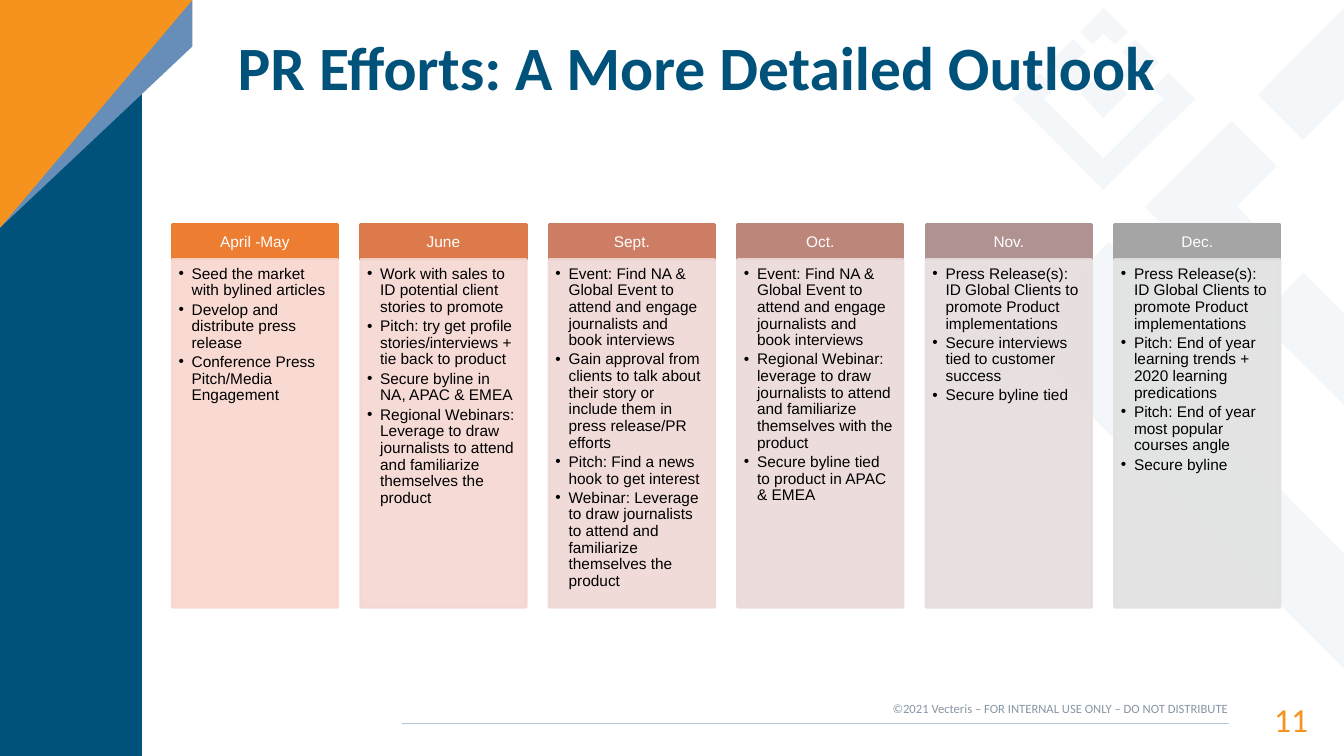
from dataclasses import dataclass

from lxml import etree
from pptx import Presentation
from pptx.dml.color import RGBColor
from pptx.enum.shapes import MSO_CONNECTOR, MSO_SHAPE
from pptx.enum.text import MSO_ANCHOR, MSO_AUTO_SIZE, PP_ALIGN
from pptx.oxml.ns import qn
from pptx.util import Cm, Pt

RECT = MSO_SHAPE.RECTANGLE
STRAIGHT = MSO_CONNECTOR.STRAIGHT
LEFT, CENTER, RIGHT = PP_ALIGN.LEFT, PP_ALIGN.CENTER, PP_ALIGN.RIGHT
TOP, MIDDLE = MSO_ANCHOR.TOP, MSO_ANCHOR.MIDDLE
NO_FIT = MSO_AUTO_SIZE.NONE

COLORS = {
    "navy": "00527B", "steel": "668EB8", "orange": "F6921E",
    "pattern": "E9EEF4", "rule": "B3C6DC", "footer": "8796A4",
    "white": "FFFFFF", "black": "000000",
    "apr_head": "ED7D31", "apr_body": "F8D7CE",
    "jun_head": "DC7A4B", "jun_body": "F4D7D1",
    "sep_head": "CC7D64", "sep_body": "EFD8D5",
    "oct_head": "BD867B", "oct_body": "EADAD9",
    "nov_head": "B09391", "nov_body": "E6DDDD",
    "dec_head": "A5A5A5", "dec_body": "E1E1E1",
}

# Column grid, in centimetres
COL_LEFT, COL_PITCH, COL_WIDTH = 4.34, 4.75, 4.17
HEAD_TOP, HEAD_HEIGHT = 5.66, 0.88
BODY_TOP, BODY_HEIGHT = 6.54, 8.76


@dataclass
class Period:
    key: str
    label: str
    efforts: list[str]


@dataclass
class Polygon:
    color: str
    points: list[tuple[float, float]]
    alpha: int = 100


PERIODS = [
    Period("apr", "April -May", [
        "Seed the market with bylined articles",
        "Develop and distribute press release",
        "Conference Press Pitch/Media Engagement"]),
    Period("jun", "June", [
        "Work with sales to ID potential client stories to promote",
        "Pitch: try get profile stories/interviews + tie back to product",
        "Secure byline in NA, APAC & EMEA",
        "Regional Webinars: Leverage to draw journalists to attend and "
        "familiarize themselves the product"]),
    Period("sep", "Sept.", [
        "Event: Find NA & Global Event to attend and engage journalists and book interviews",
        "Gain approval from clients to talk about their story or include them in "
        "press release/PR efforts",
        "Pitch: Find a news hook to get interest",
        "Webinar: Leverage to draw journalists to attend and familiarize themselves the product"]),
    Period("oct", "Oct.", [
        "Event: Find NA & Global Event to attend and engage journalists and book interviews",
        "Regional Webinar: leverage to draw journalists to attend and familiarize "
        "themselves with the product",
        "Secure byline tied to product in APAC & EMEA"]),
    Period("nov", "Nov.", [
        "Press Release(s): ID Global Clients to promote Product implementations",
        "Secure interviews tied to customer success",
        "Secure byline tied"]),
    Period("dec", "Dec.", [
        "Press Release(s): ID Global Clients to promote Product implementations",
        "Pitch: End of year learning trends + 2020 learning predications",
        "Pitch: End of year most popular courses angle",
        "Secure byline"]),
]

PATTERN = [Polygon("pattern", points, 47) for points in (
    [(31.04, 3.05), (28.85, 5.21), (31.04, 7.39), (32.18, 6.22), (31.17, 5.21), (32.18, 4.19)],
    [(27.94, 6.1), (25.53, 8.51), (33.87, 16.84), (33.87, 13.94), (28.45, 8.51), (29.39, 7.54)],
    [(32.84, 6.88), (31.7, 8.05), (33.87, 10.21), (33.87, 7.9)],
    [(33.87, 0.2), (31.7, 2.39), (32.84, 3.53), (33.87, 2.51)],
    [(28.6, 0.99), (28.27, 1.3), (28.55, 1.57), (28.27, 1.85), (28.6, 2.18), (29.21, 1.57)],
    [(27.05, 0.99), (26.44, 1.57), (27.05, 2.18), (27.36, 1.85), (27.08, 1.57), (27.36, 1.3)],
    [(27.81, 0.2), (27.23, 0.81), (27.53, 1.12), (27.81, 0.84), (28.09, 1.12), (28.42, 0.81)],
    [(27.53, 2.03), (27.23, 2.36), (27.81, 2.97), (28.42, 2.36), (28.09, 2.03), (27.81, 2.34)],
    [(26.19, 1.83), (25.53, 2.49), (27.81, 4.78), (30.12, 2.49), (29.44, 1.83),
     (29.06, 2.24), (29.31, 2.49), (27.81, 3.99), (26.31, 2.49), (26.59, 2.24)],
)]
CORNER = [
    Polygon("steel", [(4.85, 0), (0, 0), (0, 5.74), (4.85, 1.17)]),
    Polygon("orange", [(4.85, 0), (0, 0), (0, 5.74)]),
]


def rgb(name: str) -> RGBColor:
    return RGBColor.from_string(COLORS[name])


def paint(fill, color: str, alpha: int = 100) -> None:
    """Give a fill a solid colour with an opacity in percent."""
    fill.solid()
    fill.fore_color.rgb = rgb(color)
    if alpha < 100:
        clr = fill._xPr.find(".//" + qn("a:srgbClr"))
        etree.SubElement(clr, qn("a:alpha"), val=str(alpha * 1000))


def add_polygon(s, polygon: Polygon) -> None:
    points = [(Cm(x), Cm(y)) for x, y in polygon.points]
    builder = s.shapes.build_freeform(*points[0])
    builder.add_line_segments(points[1:], close=True)
    sp = builder.convert_to_shape()
    sp.shadow.inherit = False
    paint(sp.fill, polygon.color, polygon.alpha)
    sp.line.fill.background()


def add_rect(s, box: tuple, color: str, alpha: int = 100, line: float = 0):
    sp = s.shapes.add_shape(RECT, *map(Cm, box))
    sp.shadow.inherit = False
    paint(sp.fill, color, alpha)
    if line:
        sp.line.width = Pt(line)
        paint(sp.line.fill, color, alpha)
    else:
        sp.line.fill.background()
    return sp


def add_bullet(p) -> None:
    pPr = p._p.get_or_add_pPr()
    pPr.set("marL", str(Cm(0.33)))
    pPr.set("indent", str(Cm(-0.33)))
    etree.SubElement(pPr, qn("a:buFont"), typeface="Arial")
    etree.SubElement(pPr, qn("a:buChar"), char="•")


def write(sp, *texts: str, font: str = "Arial", size: float = 11, color: str = "black",
          bold: bool = False, align=LEFT, anchor=TOP, insets: tuple = (0, 0, 0, 0),
          spacing: float = 1.0, after: float = 0, bullets: bool = False) -> None:
    """Fill a shape with one paragraph per text."""
    tf = sp.text_frame
    tf.word_wrap, tf.auto_size, tf.vertical_anchor = True, NO_FIT, anchor
    tf.margin_left, tf.margin_top, tf.margin_right, tf.margin_bottom = map(Cm, insets)
    for i, text in enumerate(texts):
        p = tf.add_paragraph() if i else tf.paragraphs[0]
        if bullets:
            add_bullet(p)
        p.alignment, p.line_spacing = align, spacing
        p.space_before, p.space_after = Pt(0), Pt(after)
        r = p.add_run()
        r.text = text
        r.font.name, r.font.size, r.font.bold = font, Pt(size), bold
        r.font.color.rgb = rgb(color)


def add_period(s, index: int, period: Period) -> None:
    left = COL_LEFT + index * COL_PITCH
    head = add_rect(s, (left, HEAD_TOP, COL_WIDTH, HEAD_HEIGHT), period.key + "_head", line=2)
    write(head, period.label, color="white", align=CENTER, anchor=MIDDLE,
          insets=(0.23, 0.13, 0.23, 0.13), spacing=0.9)
    body = add_rect(s, (left, BODY_TOP, COL_WIDTH, BODY_HEIGHT), period.key + "_body", 90, 2)
    write(body, *period.efforts, insets=(0.16, 0.16, 0.23, 0.25), spacing=0.9,
          after=1.9, bullets=True)


def main() -> None:
    prs = Presentation()
    prs.slide_width, prs.slide_height = Cm(33.87), Cm(19.05)
    s = prs.slides.add_slide(prs.slide_layouts[5])

    # Background pattern, side band and corner
    for polygon in PATTERN:
        add_polygon(s, polygon)
    add_rect(s, (0, 0, 3.58, 19.05), "navy")
    for polygon in CORNER:
        add_polygon(s, polygon)

    # Title, brought in front of the pattern
    title = s.shapes.title
    title.left, title.top, title.width, title.height = map(Cm, (5.99, 0.89, 24.33, 1.73))
    write(title, "PR Efforts: A More Detailed Outlook", font="Calibri", size=44,
          color="navy", bold=True, anchor=MIDDLE, insets=(0, 0.03, 0, 0), spacing=0.9)
    title.element.getparent().append(title.element)

    # Footer
    rule = s.shapes.add_connector(STRAIGHT, Cm(10.13), Cm(18.24), Cm(30.96), Cm(18.24))
    rule.line.width = Pt(0.82)
    rule.line.color.rgb = rgb("rule")
    etree.SubElement(rule.element.spPr, qn("a:effectLst"))
    number = s.shapes.add_textbox(*map(Cm, (30.94, 17.53, 2.03, 0.97)))
    write(number, "11", font="Calibri", size=24, color="orange", align=RIGHT,
          anchor=MIDDLE, spacing=1.19)
    notice = s.shapes.add_textbox(*map(Cm, (20.12, 17.65, 10.82, 0.38)))
    write(notice, "©2021 Vecteris – FOR INTERNAL USE ONLY – DO NOT DISTRIBUTE",
          font="Calibri", size=9, color="footer", align=RIGHT)

    # Month columns
    for index, period in enumerate(PERIODS):
        add_period(s, index, period)

    prs.save("out.pptx")


if __name__ == "__main__":
    main()
